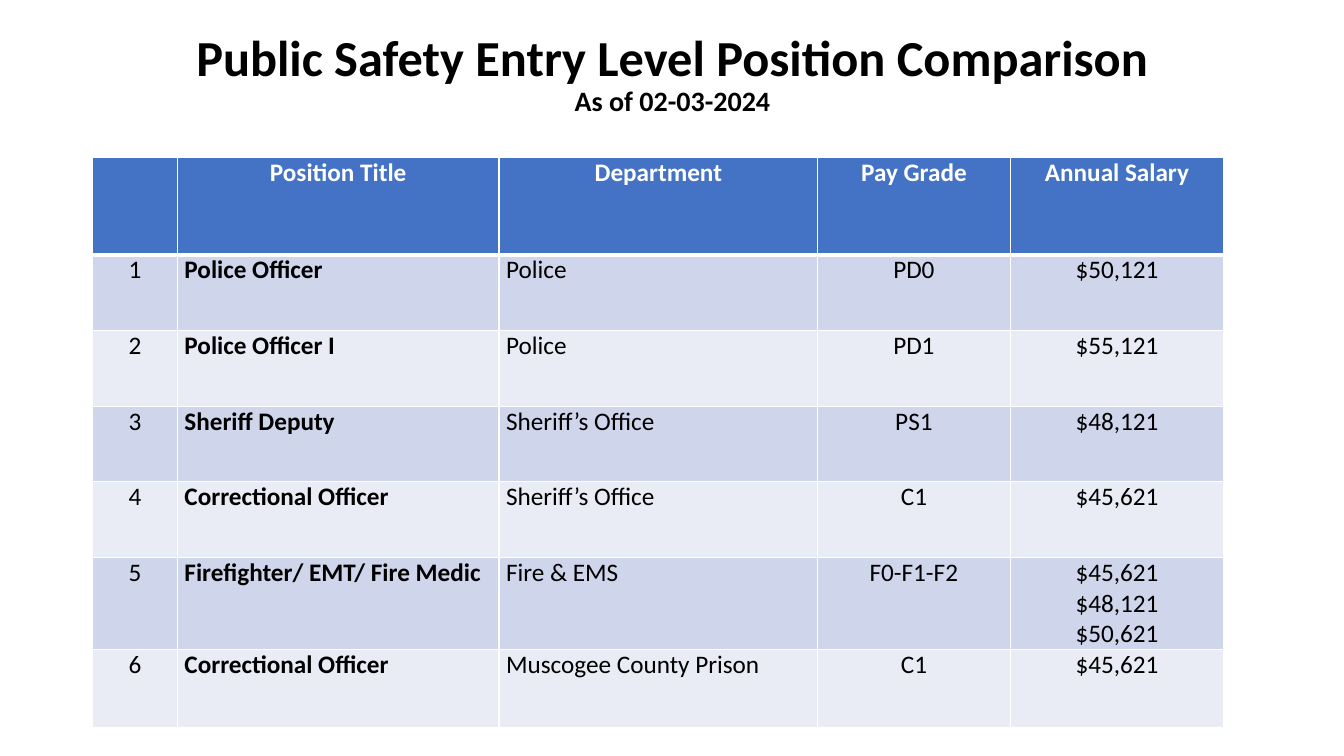
from lxml.etree import SubElement
from pptx import Presentation
from pptx.dml.color import RGBColor
from pptx.enum.text import MSO_ANCHOR, MSO_AUTO_SIZE, PP_ALIGN
from pptx.oxml.ns import qn
from pptx.util import Inches, Pt

TITLE = "Public Safety Entry Level Position Comparison"
SUBTITLE = "As of 02-03-2024"
HEADERS = ["", "Position Title", "Department", "Pay Grade", "Annual Salary"]
POSITIONS = [
    ("Police Officer", "Police", "PD0", "$50,121"),
    ("Police Officer I", "Police", "PD1", "$55,121"),
    ("Sheriff Deputy", "Sheriff’s Office", "PS1", "$48,121"),
    ("Correctional Officer", "Sheriff’s Office", "C1", "$45,621"),
    ("Firefighter/ EMT/ Fire Medic", "Fire & EMS", "F0-F1-F2", "$45,621\n$48,121\n$50,621"),
    ("Correctional Officer", "Muscogee County Prison", "C1", "$45,621"),
]
COLUMN_WIDTHS = [0.84, 3.19, 3.16, 1.91, 2.12]
ROW_HEIGHTS = [0.97] + [0.75] * 5 + [0.77]
LEFT_COLUMNS = (1, 2)
TITLE_COLUMN = 1

FONT = "Calibri"
BLACK = RGBColor(0x00, 0x00, 0x00)
WHITE = RGBColor(0xFF, 0xFF, 0xFF)
HEADER_BLUE = RGBColor(0x44, 0x72, 0xC4)
BANDS = [RGBColor(0xE9, 0xEB, 0xF5), RGBColor(0xCF, 0xD5, 0xEA)]


def add_run(paragraph, text, size, color, bold):
    """Add one formatted run to a paragraph."""
    run = paragraph.add_run()
    run.text = text
    run.font.name = FONT
    run.font.size = Pt(size)
    run.font.bold = bold
    run.font.color.rgb = color


def add_borders(cell, top, bottom):
    """Draw white lines around a cell, with widths in points."""
    properties = cell._tc.get_or_add_tcPr()
    for side, width in (("L", 1), ("R", 1), ("T", top), ("B", bottom)):
        line = SubElement(properties, qn(f"a:ln{side}"), w=str(Pt(width)))
        fill = SubElement(line, qn("a:solidFill"))
        SubElement(fill, qn("a:srgbClr"), val=str(WHITE))


def add_title(slide):
    """Place the title and its date line in the title placeholder."""
    title = slide.shapes.title
    title.left, title.top = Inches(0.92), Inches(0.23)
    title.width, title.height = Inches(11.5), Inches(1.04)
    frame = title.text_frame
    frame.auto_size = MSO_AUTO_SIZE.NONE
    frame.word_wrap = True
    frame.vertical_anchor = MSO_ANCHOR.MIDDLE
    paragraph = frame.paragraphs[0]
    paragraph.alignment = PP_ALIGN.CENTER
    paragraph.line_spacing = 0.9
    add_run(paragraph, TITLE, 36, BLACK, True)
    paragraph.add_line_break()
    add_run(paragraph, SUBTITLE, 20, BLACK, True)


def fill_cell(cell, text, row, column):
    """Write and format one table cell."""
    header = row == 0
    add_borders(cell, 3 if row == 1 else 1, 3 if header else 1)
    cell.fill.solid()
    cell.fill.fore_color.rgb = HEADER_BLUE if header else BANDS[row % 2]
    cell.margin_left = cell.margin_right = Inches(0.07)
    cell.margin_top = cell.margin_bottom = 0
    centred = header or column not in LEFT_COLUMNS
    for index, line in enumerate(text.split("\n") if text else []):
        frame = cell.text_frame
        paragraph = frame.add_paragraph() if index else frame.paragraphs[0]
        paragraph.alignment = PP_ALIGN.CENTER if centred else PP_ALIGN.LEFT
        add_run(paragraph, line, 18, WHITE if header else BLACK,
                header or column == TITLE_COLUMN)


def add_position_table(slide):
    """Add the comparison table with numbered positions."""
    rows = [HEADERS]
    rows += [(str(number), *position) for number, position in enumerate(POSITIONS, 1)]
    table = slide.shapes.add_table(
        len(rows), len(HEADERS), Inches(0.92), Inches(1.56),
        Inches(sum(COLUMN_WIDTHS)), Inches(sum(ROW_HEIGHTS))).table
    for column, width in zip(table.columns, COLUMN_WIDTHS):
        column.width = Inches(width)
    for row, height in zip(table.rows, ROW_HEIGHTS):
        row.height = Inches(height)
    for row, values in enumerate(rows):
        for column, text in enumerate(values):
            fill_cell(table.cell(row, column), text, row, column)


def main():
    """Build and save the slide."""
    presentation = Presentation()
    presentation.slide_width = Inches(13.33)
    presentation.slide_height = Inches(7.5)
    slide = presentation.slides.add_slide(presentation.slide_layouts[5])
    add_title(slide)
    add_position_table(slide)
    presentation.save("out.pptx")


if __name__ == "__main__":
    main()
